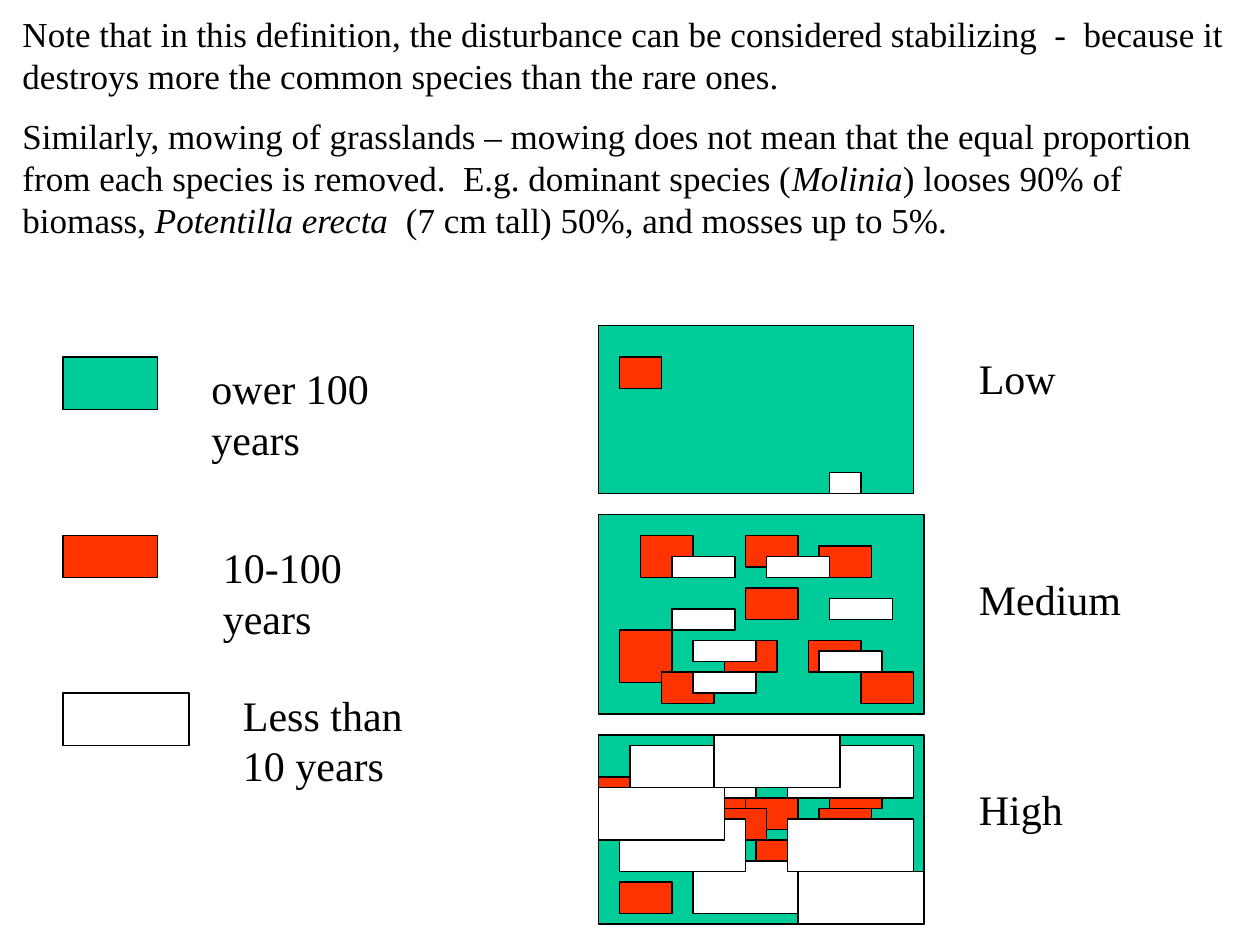
from pptx import Presentation
from pptx.dml.color import RGBColor
from pptx.enum.shapes import MSO_SHAPE
from pptx.util import Inches, Pt

GREEN = RGBColor(0x00, 0xCC, 0x99)
RED = RGBColor(0xFF, 0x33, 0x00)
WHITE = RGBColor(0xFF, 0xFF, 0xFF)
BLACK = RGBColor(0x00, 0x00, 0x00)
FONT = "Times New Roman"

# Each paragraph is a list of (text, italic) spans
NOTES = [
    [("Note that in this definition, the disturbance can be considered "
      "stabilizing  -  because it destroys more the common species than "
      "the rare ones.", False)],
    [("Similarly, mowing of grasslands – mowing does not mean that the equal "
      "proportion from each species is removed.  E.g. dominant species (", False),
     ("Molinia", True),
     (") looses 90% of biomass, ", False),
     ("Potentilla erecta  ", True),
     ("(7 cm tall) 50%, and mosses up to 5%.", False)],
]

# Legend: colour, swatch (left, top, width, height), label, label box
LEGEND = [
    (GREEN, (6, 34, 9, 5), "ower 100 years", (1.58, 2.83, 1.83, 0.9)),
    (RED, (6, 51, 9, 4), "10-100 years", (1.67, 4.25, 1.92, 0.9)),
    (WHITE, (6, 66, 12, 5), "Less than 10 years", (1.83, 5.42, 1.58, 0.9)),
]

# Patches inside each panel, back to front: colour, (width, height), positions
LOW = [
    (RED, (4, 3), [(2, 3)]),
    (WHITE, (3, 2), [(22, 14)]),
]
MEDIUM = [
    (RED, (5, 4), [(4, 2)]),
    (RED, (5, 5), [(2, 11)]),
    (RED, (5, 3), [(12, 12), (20, 12), (21, 3)]),
    (WHITE, (6, 2), [(7, 4), (9, 12), (7, 9), (22, 8)]),
    (RED, (5, 3), [(6, 15), (14, 7), (14, 2)]),
    (WHITE, (6, 2), [(21, 13), (9, 15), (16, 4)]),
    (RED, (5, 3), [(25, 15)]),
]
HIGH = [
    (RED, (5, 3), [(3, 3), (7, 3), (2, 9), (14, 6), (9, 12), (20, 13),
                   (21, 7), (22, 4)]),
    (RED, (3, 2), [(10, 8)]),
    (RED, (5, 3), [(25, 11), (15, 10), (16, 2), (9, 5), (11, 7), (5, 7),
                   (0, 4), (2, 14)]),
    (WHITE, (12, 5), [(9, 12), (18, 1), (2, 8), (18, 8), (3, 1), (19, 13),
                      (11, 0), (0, 5)]),
]

# Panels: (left, top, width, height), patches, label, label box
PANELS = [
    ((57, 31, 30, 16), LOW, "Low", (7.67, 2.75, 1.67, 0.5)),
    ((57, 49, 31, 19), MEDIUM, "Medium", (7.67, 4.5, 1.75, 0.5)),
    ((57, 70, 31, 18), HIGH, "High", (7.67, 6.17, 2, 0.5)),
]


def add_block(page, colour, cells):
    """Add an outlined rectangle measured in twelfths of an inch."""
    block = page.shapes.add_shape(
        MSO_SHAPE.RECTANGLE, *[Inches(cell / 12) for cell in cells])
    block.shadow.inherit = False
    block.fill.solid()
    block.fill.fore_color.rgb = colour
    block.line.color.rgb = BLACK
    block.line.width = Pt(0.75)


def add_text(page, area, paragraphs, size):
    box = page.shapes.add_textbox(*[Inches(length) for length in area])
    frame = box.text_frame
    frame.word_wrap = True
    for index, spans in enumerate(paragraphs):
        para = frame.add_paragraph() if index else frame.paragraphs[0]
        para.space_before = Pt(size / 2 if index else 0)
        para.font.name = FONT
        para.font.size = Pt(size)
        para.font.color.rgb = BLACK
        for text, italic in spans:
            span = para.add_run()
            span.text = text
            if italic:
                span.font.italic = True


def add_label(page, area, text):
    add_text(page, area, [[(text, False)]], 24)


def add_panel(page, area, patches):
    add_block(page, GREEN, area)
    left, top = area[:2]
    for colour, size, positions in patches:
        for across, down in positions:
            add_block(page, colour, (left + across, top + down, *size))


def main():
    deck = Presentation()
    deck.slide_width, deck.slide_height = Inches(10), Inches(7.5)
    page = deck.slides.add_slide(deck.slide_layouts[6])

    # Explanation
    add_text(page, (0.08, 0.05, 9.92, 1.95), NOTES, 20)

    # Legend of stand ages
    for colour, swatch, label, label_area in LEGEND:
        add_block(page, colour, swatch)
        add_label(page, label_area, label)

    # Panels by disturbance level
    for area, patches, label, label_area in PANELS:
        add_panel(page, area, patches)
        add_label(page, label_area, label)

    deck.save("out.pptx")


if __name__ == "__main__":
    main()
